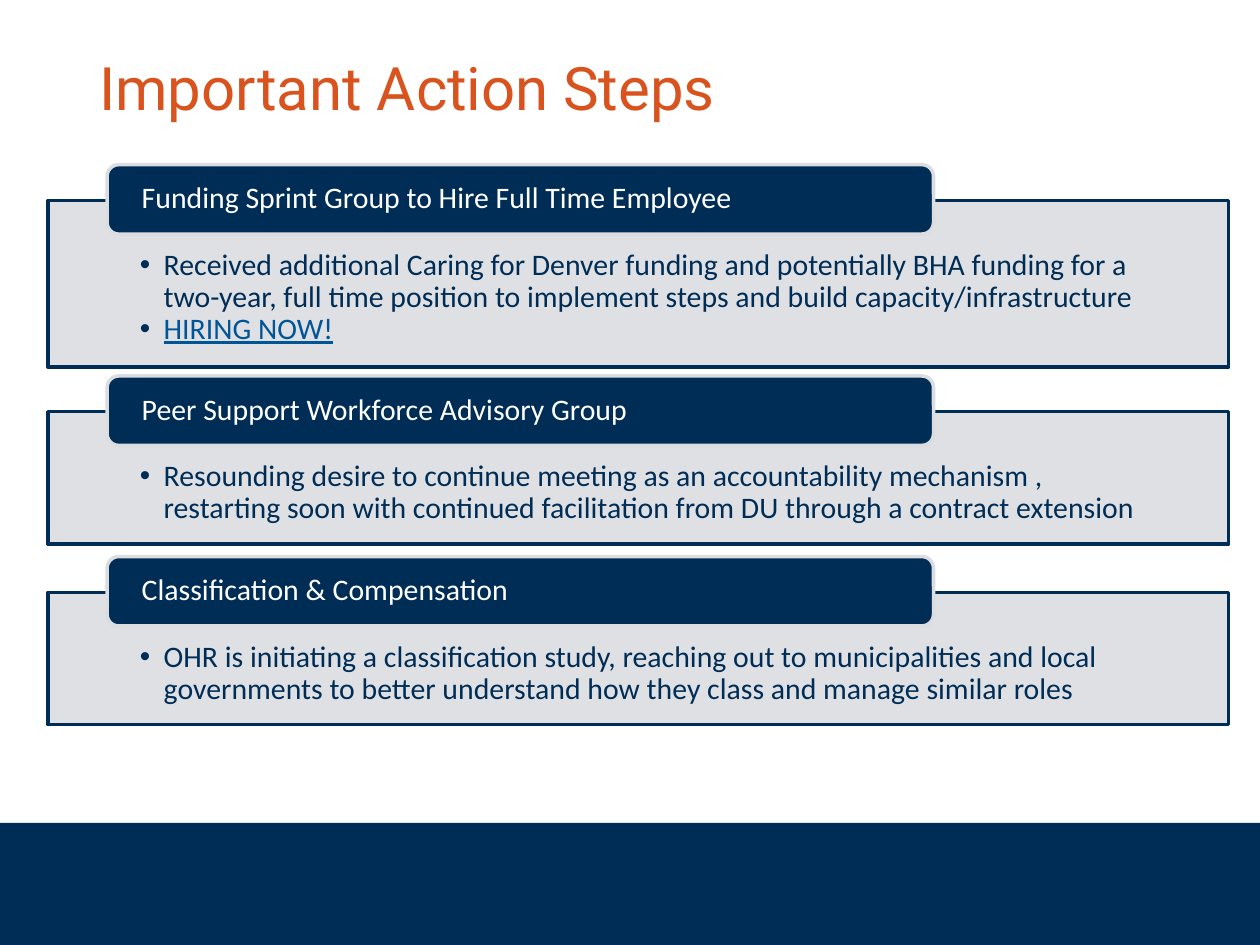
from dataclasses import dataclass

from lxml import etree
from pptx import Presentation
from pptx.dml.color import RGBColor
from pptx.enum import shapes, text
from pptx.oxml import ns
from pptx.util import Cm, Pt


@dataclass(frozen=True)
class Theme:
    navy: str = "002D56"
    orange: str = "D9531E"
    grey: str = "DCDDE1"
    link: str = "005596"
    white: str = "FFFFFF"
    title_font: str = "Roboto"
    body_font: str = "Calibri"
    title_size: float = 34.2
    body_size: float = 17
    outline: float = 2


THEME = Theme()
PANEL_LEFT, PANEL_WIDTH = 0.97, 23.8
TAB_LEFT, TAB_WIDTH, TAB_HEIGHT = 2.16, 16.66, 1.4
TAB_RISE = 0.72  # how far a tab stands above its panel

# Panel top, panel height, heading, bullets with their text colours
STEPS = [
    (4.04, 3.36, "Funding Sprint Group to Hire Full Time Employee", [
        ("Received additional Caring for Denver funding and potentially BHA "
         "funding for a two-year, full time position to implement steps and "
         "build capacity/infrastructure", THEME.navy),
        ("HIRING NOW!", THEME.link)]),
    (8.3, 2.67, "Peer Support Workforce Advisory Group", [
        ("Resounding desire to continue meeting as an accountability "
         "mechanism , restarting soon with continued facilitation from DU "
         "through a contract extension", THEME.navy)]),
    (11.94, 2.67, "Classification & Compensation", [
        ("OHR is initiating a classification study, reaching out to "
         "municipalities and local governments to better understand how they "
         "class and manage similar roles", THEME.navy)]),
]


def apply(obj, **values):
    for name, value in values.items():
        setattr(obj, name, value)


def place(sp, left, top, width, height):
    apply(sp, left=Cm(left), top=Cm(top), width=Cm(width), height=Cm(height))


def paint(sp, fill, line=None):
    sp.fill.solid()
    sp.fill.fore_color.rgb = RGBColor.from_string(fill)
    if line:
        sp.line.width = Pt(THEME.outline)
        sp.line.color.rgb = RGBColor.from_string(line)
    else:
        sp.line.fill.background()


def set_frame(tf, anchor, left, top, right, bottom):
    apply(tf, word_wrap=True, auto_size=text.MSO_AUTO_SIZE.NONE,
          vertical_anchor=anchor, margin_left=Cm(left), margin_top=Cm(top),
          margin_right=Cm(right), margin_bottom=Cm(bottom))


def write(p, words, color, size=THEME.body_size, font=THEME.body_font, **extra):
    apply(p, alignment=text.PP_ALIGN.LEFT, line_spacing=0.9,
          space_before=Pt(0), space_after=Pt(0))
    r = p.add_run()
    r.text = words
    apply(r.font, name=font, size=Pt(size), bold=False, **extra)
    r.font.color.rgb = RGBColor.from_string(color)


def add_bullet(p):
    pPr = p._p.get_or_add_pPr()
    pPr.set("marL", str(Cm(0.48)))
    pPr.set("indent", str(Cm(-0.48)))
    color = etree.SubElement(pPr, ns.qn("a:buClr"))
    etree.SubElement(color, ns.qn("a:srgbClr"), val=THEME.navy)
    etree.SubElement(pPr, ns.qn("a:buFont"), typeface="Arial")
    etree.SubElement(pPr, ns.qn("a:buChar"), char="•")


def set_title(sp, words):
    place(sp, 1.75, 0.97, 20.47, 1.75)
    set_frame(sp.text_frame, text.MSO_ANCHOR.MIDDLE, 0.25, 0.13, 0.25, 0.13)
    write(sp.text_frame.paragraphs[0], words, THEME.orange,
          THEME.title_size, THEME.title_font)


def fill_panel(sp, top, height, bullets):
    place(sp, PANEL_LEFT, top, PANEL_WIDTH, height)
    paint(sp, THEME.grey, THEME.navy)
    fill_color = sp.fill._xPr.find(ns.qn("a:solidFill"))[0]
    etree.SubElement(fill_color, ns.qn("a:alpha"), val="90000")
    tf = sp.text_frame
    set_frame(tf, text.MSO_ANCHOR.TOP, 1.85, 0.99, 1.85, 0.33)
    for i, (words, color) in enumerate(bullets):
        p = tf.add_paragraph() if i else tf.paragraphs[0]
        add_bullet(p)
        write(p, words, color, underline=color == THEME.link)


def add_tab(s, top, heading):
    sp = s.shapes.add_shape(shapes.MSO_SHAPE.ROUNDED_RECTANGLE, Cm(TAB_LEFT),
                            Cm(top), Cm(TAB_WIDTH), Cm(TAB_HEIGHT))
    sp.shadow.inherit = False
    paint(sp, THEME.navy, THEME.grey)
    set_frame(sp.text_frame, text.MSO_ANCHOR.MIDDLE, 0.63, 0, 0.63, 0)
    write(sp.text_frame.paragraphs[0], heading, THEME.white)


def add_footer(s, top, width, height):
    sp = s.shapes.add_shape(shapes.MSO_SHAPE.RECTANGLE, Cm(0), Cm(top),
                            Cm(width), Cm(height))
    sp.shadow.inherit = False
    paint(sp, THEME.navy)


def main():
    prs = Presentation()
    prs.slide_width, prs.slide_height = Cm(25.4), Cm(19.05)
    s = prs.slides.add_slide(prs.slide_layouts.get_by_name("Comparison"))

    # Title
    title, *bodies = s.placeholders
    set_title(title, "Important Action Steps")

    # Action steps: a list panel with a heading tab over its top edge
    for sp, (top, height, heading, bullets) in zip(bodies, STEPS):
        fill_panel(sp, top, height, bullets)
        add_tab(s, top - TAB_RISE, heading)
    for sp in bodies[len(STEPS):]:
        sp.element.getparent().remove(sp.element)

    # Footer band
    add_footer(s, 16.59, 25.4, 2.46)

    prs.save("out.pptx")


if __name__ == "__main__":
    main()
